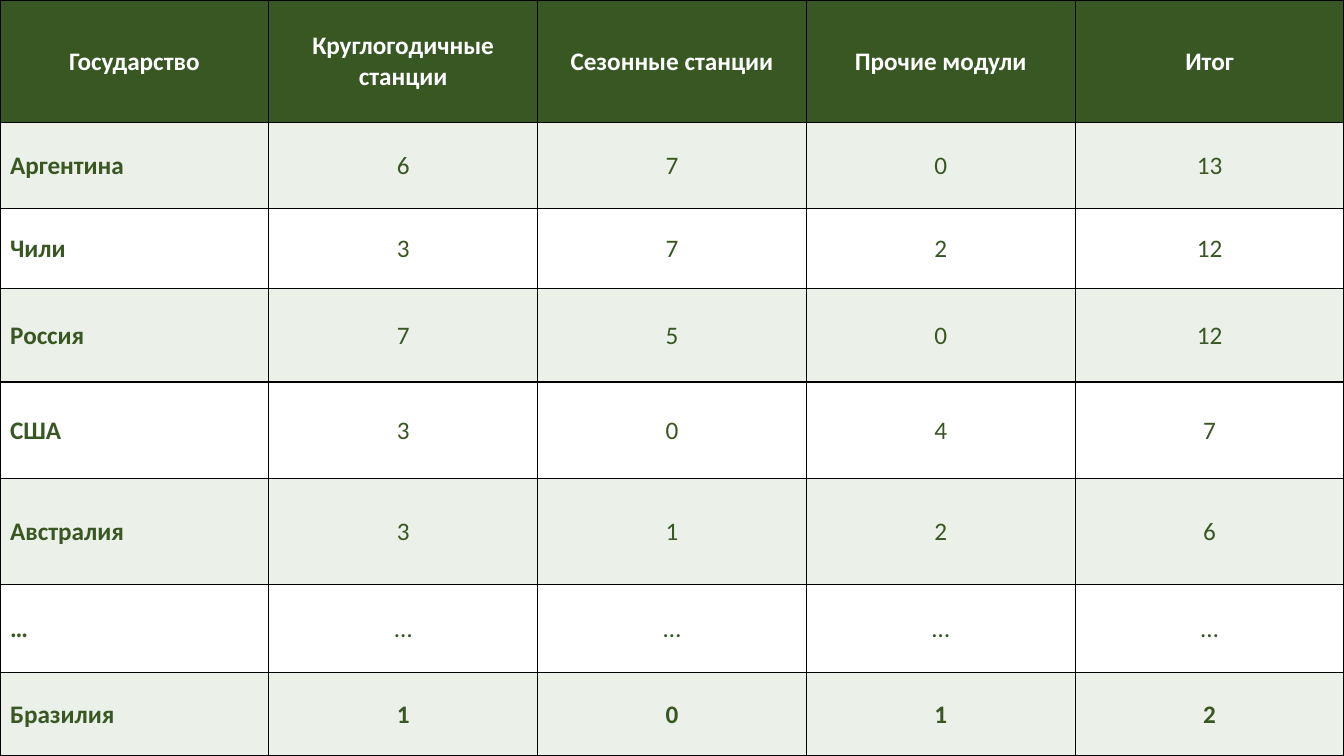
"""Build a slide with a table of Antarctic stations by state."""
from dataclasses import dataclass

from pptx import Presentation
from pptx.dml.color import RGBColor
from pptx.enum.text import MSO_ANCHOR as Anchor, PP_ALIGN as Align
from pptx.oxml import parse_xml
from pptx.oxml.ns import nsdecls
from pptx.table import Table, _Cell as Cell
from pptx.util import Emu, Pt

EMU_PER_PX = 9525
PAGE_WIDTH, PAGE_HEIGHT = 1280, 720


@dataclass(frozen=True)
class Theme:
    font: str = "Calibri"
    text_size: int = 18
    border_width: int = 1
    green: str = "385723"
    pale: str = "EBF1E9"
    white: str = "FFFFFF"
    border: str = "000000"


@dataclass(frozen=True)
class StationRow:
    height: int
    texts: tuple[str, ...]
    bold: bool = False


THEME = Theme()
HEADER = StationRow(
    117,
    ("Государство", "Круглогодичные станции", "Сезонные станции", "Прочие модули", "Итог"),
    bold=True,
)
STATES = (
    StationRow(82, ("Аргентина", "6", "7", "0", "13")),
    StationRow(76, ("Чили", "3", "7", "2", "12")),
    StationRow(89, ("Россия", "7", "5", "0", "12")),
    StationRow(92, ("США", "3", "0", "4", "7")),
    StationRow(101, ("Австралия", "3", "1", "2", "6")),
    StationRow(84, ("…", "…", "…", "…", "…")),
    StationRow(79, ("Бразилия", "1", "0", "1", "2"), bold=True),
)


def px(length: int) -> Emu:
    return Emu(length * EMU_PER_PX)


def add_borders(cell: Cell) -> None:
    properties = cell._tc.get_or_add_tcPr()
    for side in ("lnL", "lnR", "lnT", "lnB"):
        properties.append(parse_xml(
            f'<a:{side} {nsdecls("a")} w="{Pt(THEME.border_width)}">'
            f'<a:solidFill><a:srgbClr val="{THEME.border}"/></a:solidFill></a:{side}>'
        ))


def fill_cell(cell: Cell, text: str, fill: str, color: str, bold: bool, align: Align) -> None:
    add_borders(cell)
    cell.fill.solid()
    cell.fill.fore_color.rgb = RGBColor.from_string(fill)
    cell.vertical_anchor = Anchor.MIDDLE
    cell.text = text
    para = cell.text_frame.paragraphs[0]
    para.alignment = align
    para.font.name = THEME.font
    para.font.size = Pt(THEME.text_size)
    para.font.bold = bold
    para.font.color.rgb = RGBColor.from_string(color)


def fill_row(table: Table, index: int, row: StationRow) -> None:
    is_header = index == 0
    band = THEME.pale if index % 2 else THEME.white
    fill = THEME.green if is_header else band
    color = THEME.white if is_header else THEME.green
    table.rows[index].height = px(row.height)
    for column, text in enumerate(row.texts):
        is_state = column == 0
        align = Align.LEFT if is_state and not is_header else Align.CENTER
        fill_cell(table.cell(index, column), text, fill, color, row.bold or is_state, align)


def main() -> None:
    deck = Presentation()
    deck.slide_width, deck.slide_height = px(PAGE_WIDTH), px(PAGE_HEIGHT)
    page = deck.slides.add_slide(deck.slide_layouts[6])
    rows = (HEADER, *STATES)
    table = page.shapes.add_table(
        len(rows), len(HEADER.texts), px(0), px(0), px(PAGE_WIDTH), px(PAGE_HEIGHT)
    ).table
    table.horz_banding = False
    for index, row in enumerate(rows):
        fill_row(table, index, row)
    deck.save("out.pptx")


if __name__ == "__main__":
    main()
